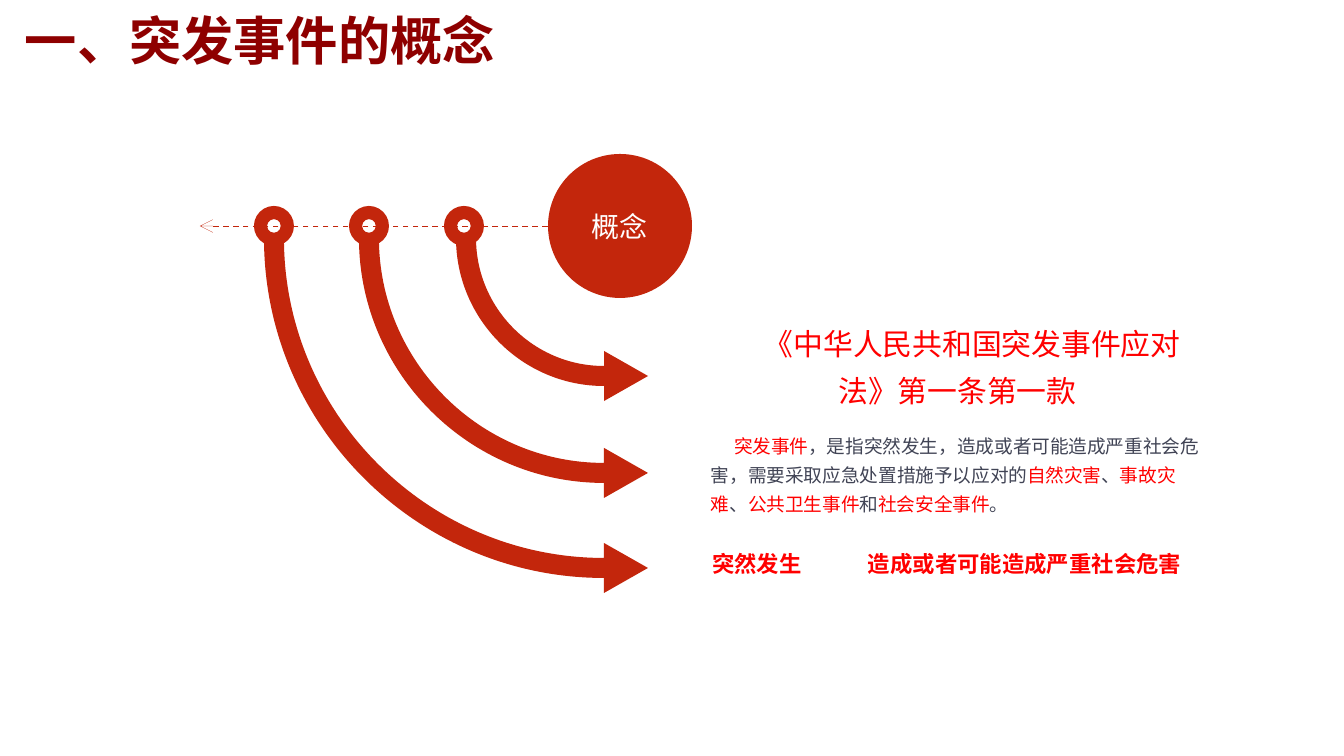
from lxml import etree
from pptx import Presentation, util as u
from pptx.dml.color import RGBColor
from pptx.enum import dml, shapes, text
from pptx.oxml.ns import qn

PX = 914400 / 134.4
FONT = "Noto Sans CJK SC"
RUST = RGBColor(0xC3, 0x26, 0x0C)
RED = RGBColor(0xFF, 0x00, 0x00)
MAROON = RGBColor(0x8E, 0x00, 0x00)
SLATE = RGBColor(0x41, 0x44, 0x55)
WHITE = RGBColor(0xFF, 0xFF, 0xFF)
LEFT, MID = text.PP_ALIGN.LEFT, text.PP_ALIGN.CENTER

# box, (words, colour) runs, size, then paragraph format
TEXTS = [
    dict(box=(703, 311, 509, 67), size=16, align=MID, indent=30,
         runs=[("《中华人民共和国突发事件应对法》第一条第一款", RED)]),
    dict(box=(703, 424, 509, 97), size=10, indent=23, runs=[
        ("突发事件", RED),
        ("，是指突然发生，造成或者可能造成严重社会危害，需要采取应急处置措施予以应对的", SLATE),
        ("自然灾害", RED), ("、", SLATE), ("事故灾难", RED), ("、", SLATE),
        ("公共卫生事件", RED), ("和", SLATE), ("社会安全事件", RED), ("。", SLATE)]),
    dict(box=(704, 538, 509, 43), size=12, bold=True, tab=156,
         runs=[("突然发生\t造成或者可能造成严重社会危害", RED)]),
    dict(box=(12, 15, 1210, 56), size=28, bold=True, space=0.9, pad=(13, 0),
         runs=[("一、突发事件的概念", MAROON)]),
]
HUB = (620, 226, 72)                # centre x, centre y, radius
RING_X, RING_STEP, RING_R = 274, 95, 20
ARC_X, ARC_Y = 604, 238             # shared centre of the three bends
BENDS = [138, 235, 330]             # middle radius of each bend
HALF, HEAD, TIP = 10, 25, 44        # band half width, head half width, head length
KAPPA = 0.55                        # Bezier handle of a quarter circle

prs = Presentation()
prs.slide_width, prs.slide_height = [round(n * PX) for n in (1344, 756)]
slide = prs.slides.add_slide(prs.slide_layouts[6])


def px(*vals):
    return [round(v * PX) for v in vals]


def write(frame, runs, size, bold=False, align=LEFT, indent=0, tab=0,
          space=1.3, pad=(8, 4)):
    side, top = px(*pad)
    look = dict(word_wrap=True, margin_left=side, margin_right=side,
                margin_top=top, margin_bottom=top)
    for key, val in look.items():
        setattr(frame, key, val)
    para = frame.paragraphs[0]
    props = para._p.get_or_add_pPr()
    props.set("hangingPunct", "0")
    if indent:
        props.set("marL", "0")
        props.set("indent", str(*px(indent)))
    if tab:
        tabs = etree.SubElement(props, qn("a:tabLst"))
        etree.SubElement(tabs, qn("a:tab"), pos=str(*px(tab)), algn="l")
    para.alignment, para.line_spacing = align, space
    for words, tint in runs:
        run = para.add_run()
        run.text = words
        for key, val in dict(name=FONT, size=u.Pt(size), bold=bold).items():
            setattr(run.font, key, val)
        run.font.color.rgb = tint
        etree.SubElement(run._r.get_or_add_rPr(), qn("a:ea"), typeface=FONT)


def paint(shape):
    shape.shadow.inherit = False
    shape.fill.solid()
    shape.fill.fore_color.rgb = RUST
    shape.line.fill.background()
    return shape


def disc(kind, x, y, r):
    return paint(slide.shapes.add_shape(kind, *px(x - r, y - r, 2 * r, 2 * r)))


def curve(seg, *pts):
    """Turn a straight segment into a Bezier curve; points are relative to the band."""
    seg.tag = qn("a:cubicBezTo")
    for node in list(seg):
        seg.remove(node)
    for x, y in pts:
        etree.SubElement(seg, qn("a:pt"), x=str(*px(x)), y=str(*px(y)))


def bend(r):
    """Quarter-circle band that ends in a head pointing right."""
    y, out, inn = ARC_Y + r, r + HALF, r - HALF
    pts = [(ARC_X - out, ARC_Y), (ARC_X, ARC_Y + out),
           (ARC_X, y + HEAD), (ARC_X + TIP, y), (ARC_X, y - HEAD),
           (ARC_X, ARC_Y + inn), (ARC_X - inn, ARC_Y)]
    pen = slide.shapes.build_freeform(*px(*pts[0]))
    pen.add_line_segments([px(*p) for p in pts[1:]], close=True)
    band = paint(pen.convert_to_shape())
    segs = list(band._element.iter(qn("a:lnTo")))
    curve(segs[0], (0, KAPPA * out), (out - KAPPA * out, out), (out, out))
    curve(segs[5], (out - KAPPA * inn, inn), (out - inn, KAPPA * inn),
          (out - inn, 0))


hub = disc(shapes.MSO_SHAPE.OVAL, *HUB)
hub.text_frame.vertical_anchor = text.MSO_ANCHOR.MIDDLE
write(hub.text_frame, [("概念", WHITE)], 15, align=MID, space=1.0)

axis = slide.shapes.add_connector(
    shapes.MSO_CONNECTOR.STRAIGHT, *px(HUB[0] - HUB[2], HUB[1], 200, HUB[1]))
axis.line.color.rgb = RUST
axis.line.width = 1                 # hairline
axis.line.dash_style = dml.MSO_LINE.DASH
etree.SubElement(axis.line._get_or_add_ln(), qn("a:tailEnd"), type="arrow")
etree.SubElement(axis._element.spPr, qn("a:effectLst"))

for i, r in enumerate(reversed(BENDS)):
    ring = disc(shapes.MSO_SHAPE.DONUT, RING_X + i * RING_STEP, HUB[1], RING_R)
    ring.adjustments[0] = 0.33
    bend(r)

for item in TEXTS:
    box = slide.shapes.add_textbox(*px(*item["box"]))
    write(box.text_frame, **{k: v for k, v in item.items() if k != "box"})

prs.save("out.pptx")
